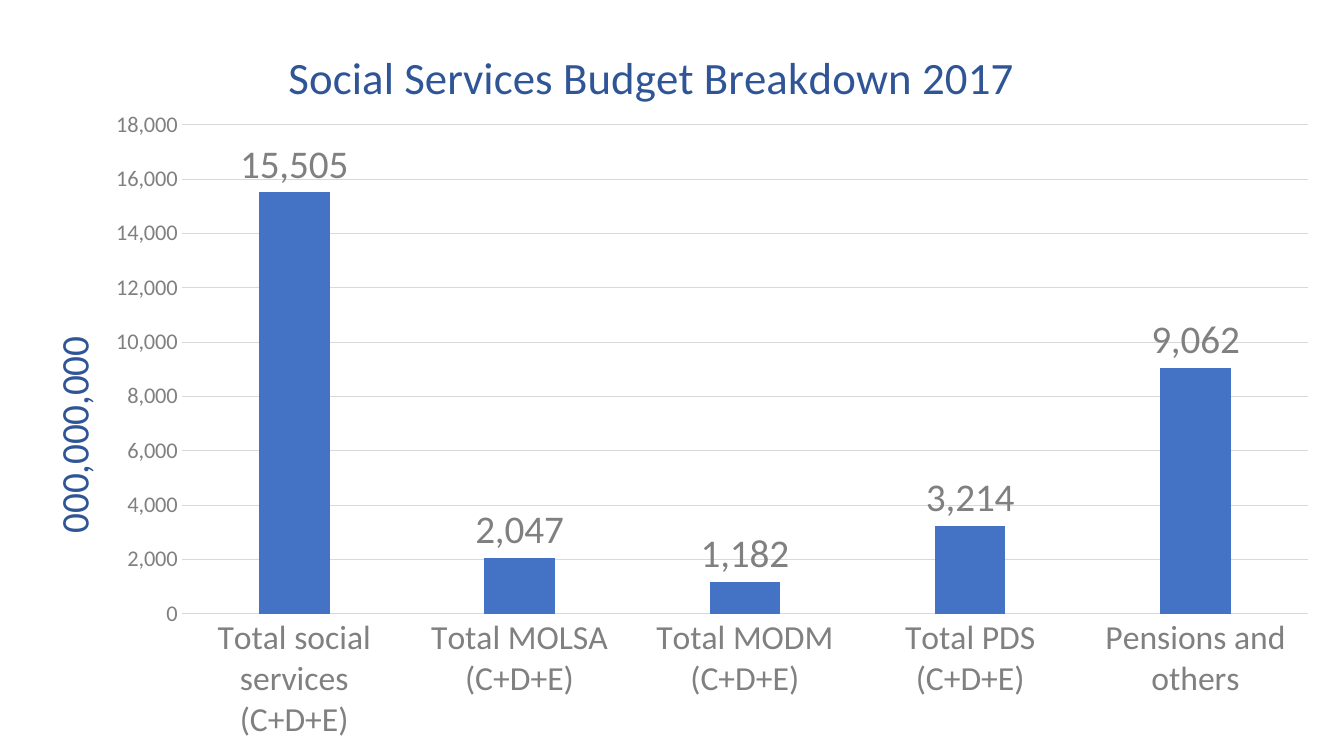
from lxml import etree
from pptx import Presentation
from pptx.chart.data import CategoryChartData
from pptx.dml.color import RGBColor
from pptx.enum.chart import XL_CHART_TYPE, XL_LABEL_POSITION, XL_TICK_MARK
from pptx.oxml.ns import qn
from pptx.util import Inches, Pt

COLUMNS = XL_CHART_TYPE.COLUMN_CLUSTERED
OUTSIDE_END = XL_LABEL_POSITION.OUTSIDE_END
NO_TICKS = XL_TICK_MARK.NONE
NAVY, BLUE, GRAY, PALE = "2F5597", "4472C4", "808080", "D9D9D9"
NUMBER_FORMAT = "#,##0"


def style_font(font, size, color):
    font.name = "Calibri"
    font.size = Pt(size)
    font.bold = False
    font.color.rgb = RGBColor.from_string(color)


def place(element, **settings):
    """Give a chart part a manual layout in fractions of the chart."""
    for old_layout in element.findall(qn("c:layout")):
        element.remove(old_layout)
    layout = etree.Element(qn("c:layout"))
    manual = etree.SubElement(layout, qn("c:manualLayout"))
    for name, value in settings.items():
        etree.SubElement(manual, qn(f"c:{name}")).set("val", str(value))
    text = element.find(qn("c:tx"))
    element.insert(0 if text is None else 1, layout)


deck = Presentation()
deck.slide_width, deck.slide_height = Inches(13.33), Inches(7.5)
page = deck.slides.add_slide(deck.slide_layouts[6])

# Budget data
budget = CategoryChartData(number_format=NUMBER_FORMAT)
budget.categories = [
    "Total social services (C+D+E)",
    "Total MOLSA (C+D+E)",
    "Total MODM (C+D+E)",
    "Total PDS (C+D+E)",
    "Pensions and others",
]
budget.add_series("Series 1", [15505, 2047, 1182, 3214, 9062])
chart = page.shapes.add_chart(
    COLUMNS, Inches(0), Inches(0.08), Inches(13.24), Inches(7.42), budget
).chart
chart.has_legend = False
style_font(chart.font, 28, NAVY)

# Titles
category_axis, value_axis = chart.category_axis, chart.value_axis
for owner, wording, size in (
    (chart, "Social Services Budget Breakdown 2017", 32),
    (value_axis, "000,000,000", 28),
):
    owner.has_title = True
    frame = (owner.chart_title if owner is chart else owner.axis_title).text_frame
    frame.text = wording
    style_font(frame.paragraphs[0].font, size, NAVY)

# Axes
for axis, size in ((category_axis, 24), (value_axis, 16)):
    axis.major_tick_mark = axis.minor_tick_mark = NO_TICKS
    style_font(axis.tick_labels.font, size, GRAY)
value_axis.minimum_scale, value_axis.maximum_scale = 0, 18000
value_axis.major_unit = 2000
value_axis.tick_labels.number_format = NUMBER_FORMAT
value_axis.tick_labels.number_format_is_linked = False
value_axis.format.line.fill.background()
for line in (category_axis.format.line, value_axis.major_gridlines.format.line):
    line.color.rgb = RGBColor.from_string(PALE)
    line.width = Pt(0.75)

# Columns and their labels
plot = chart.plots[0]
plot.gap_width, plot.overlap = 219, -27
plot.vary_by_categories = False
fill = plot.series[0].format.fill
fill.solid()
fill.fore_color.rgb = RGBColor.from_string(BLUE)
labels = plot.series[0].data_labels
labels.show_value = True
labels.position = OUTSIDE_END
labels.number_format = NUMBER_FORMAT
labels.number_format_is_linked = False
style_font(labels.font, 28, GRAY)

# Layout of the titles and the plot area
chart_root = chart.element.find(qn("c:chart"))
plot_area = chart_root.find(qn("c:plotArea"))
axis_title = plot_area.find(qn("c:valAx")).find(qn("c:title"))
place(chart_root.find(qn("c:title")), xMode="edge", yMode="edge", x=0.21, y=0.04)
place(axis_title, xMode="edge", yMode="edge", x=0.03, y=0.43)
place(plot_area, layoutTarget="inner", xMode="edge", yMode="edge",
      x=0.136, y=0.156, w=0.844, h=0.654)

deck.save("out.pptx")
